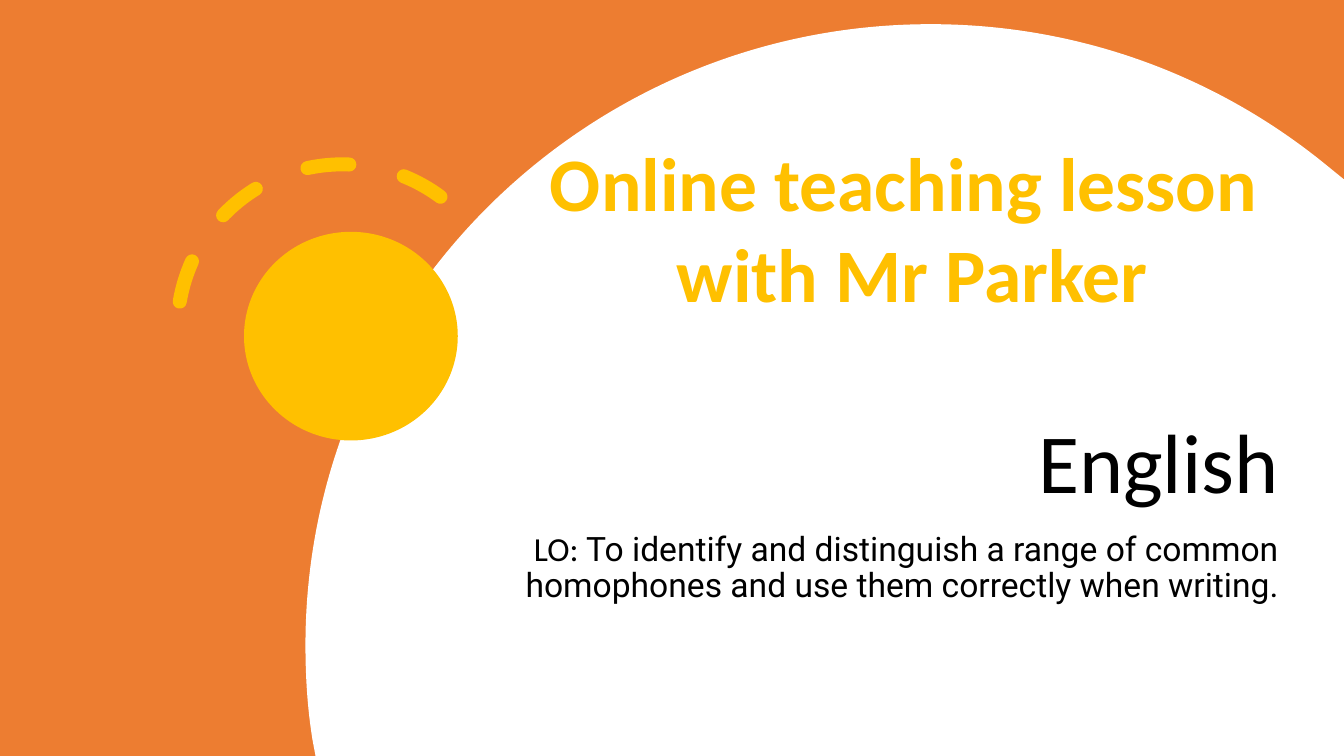
from lxml import etree
from pptx import Presentation
from pptx.dml.color import RGBColor
from pptx.enum import dml, shapes, text
from pptx.oxml import ns
from pptx.util import Inches, Pt

COLOURS = {"orange": "ED7D31", "white": "FFFFFF", "sun": "FFC000", "black": "000000"}

DOME_START = (9.23, 0.24)
DOME_SEGMENTS = [
    [(10.73, 0.24), (12.1, 0.77), (13.17, 1.65)],
    [(13.33, 1.78)],
    [(13.33, 7.5)],
    [(3.13, 7.5)],
    [(3.1, 7.34)],
    [(3.05, 7.03), (3.03, 6.72), (3.03, 6.4)],
    [(3.03, 3), (5.81, 0.24), DOME_START],
]


def colour(name):
    return RGBColor.from_string(COLOURS[name])


def paint(shape, fill):
    shape.shadow.inherit = False
    shape.fill.solid()
    shape.fill.fore_color.rgb = colour(fill)
    shape.line.fill.background()


def add_filled(page, kind, left, top, width, height, fill):
    shape = page.shapes.add_shape(
        kind, Inches(left), Inches(top), Inches(width), Inches(height))
    paint(shape, fill)


def add_curved(page, start, segments, fill):
    builder = page.shapes.build_freeform(*map(Inches, start))
    builder.add_line_segments(
        [tuple(map(Inches, segment[-1])) for segment in segments], close=True)
    shape = builder.convert_to_shape()
    paint(shape, fill)
    for edge, segment in zip(shape._element.xpath(".//a:lnTo"), segments):
        if len(segment) == 3:
            edge.tag = ns.qn("a:cubicBezTo")
            for index, (x, y) in enumerate(segment[:2]):
                control = etree.Element(ns.qn("a:pt"))
                control.set("x", str(Inches(x) - shape.left))
                control.set("y", str(Inches(y) - shape.top))
                edge.insert(index, control)


def add_rays(page, left, top, size, rotation, line):
    arc = page.shapes.add_shape(
        shapes.MSO_SHAPE.ARC, Inches(left), Inches(top), Inches(size), Inches(size))
    arc.shadow.inherit = False
    arc.adjustments[0] = 144.555
    arc.adjustments[1] = 2.278
    arc.rotation = rotation
    arc.fill.background()
    arc.line.color.rgb = colour(line)
    arc.line.width = Pt(10)
    arc.line.dash_style = dml.MSO_LINE.DASH
    arc.line._get_or_add_ln().set("cap", "rnd")


def add_text(page, left, top, width, height, paragraphs, size, fill, align,
             anchor=text.MSO_ANCHOR.TOP, bold=None, wrap=True, spacing=None, before=None):
    box = page.shapes.add_textbox(
        Inches(left), Inches(top), Inches(width), Inches(height))
    frame = box.text_frame
    frame.word_wrap = wrap
    frame.vertical_anchor = anchor
    for index, spans in enumerate(paragraphs):
        para = frame.add_paragraph() if index else frame.paragraphs[0]
        para.alignment = align
        para.line_spacing = spacing
        para.space_before = before
        para.font.size = Pt(size)
        para.font.bold = bold
        para.font.color.rgb = colour(fill)
        for words, font in spans:
            span = para.add_run()
            span.text = words
            span.font.name = font


def main():
    deck = Presentation()
    deck.slide_width, deck.slide_height = Inches(13.33), Inches(7.5)
    page = deck.slides.add_slide(deck.slide_layouts[6])

    add_filled(page, shapes.MSO_SHAPE.RECTANGLE, 0, 0, 13.33, 7.5, "orange")
    add_curved(page, DOME_START, DOME_SEGMENTS, "white")
    add_filled(page, shapes.MSO_SHAPE.OVAL, 2.42, 2.3, 2.12, 2.07, "sun")
    add_rays(page, 1.76, 1.63, 3.27, 308.7, "sun")

    right, centre = text.PP_ALIGN.RIGHT, text.PP_ALIGN.CENTER
    add_text(page, 4.42, 2.12, 8.36, 3.01, [[("English", "Calibri")]],
             60, "black", right, anchor=text.MSO_ANCHOR.BOTTOM, spacing=0.9)
    objective = [
        ("LO: ", "Calibri"),
        ("To identify and distinguish a range of common homophones "
         "and use them correctly when writing.", "Roboto"),
    ]
    add_text(page, 4.42, 5.23, 8.36, 1.45, [objective],
             24, "black", right, spacing=0.9, before=Pt(10))
    heading = [[("Online teaching lesson ", "Calibri")], [("with Mr Parker", "Calibri")]]
    add_text(page, 5.32, 1.3, 7.46, 1.92, heading,
             54, "sun", centre, bold=True, wrap=False)

    deck.save("out.pptx")


if __name__ == "__main__":
    main()
